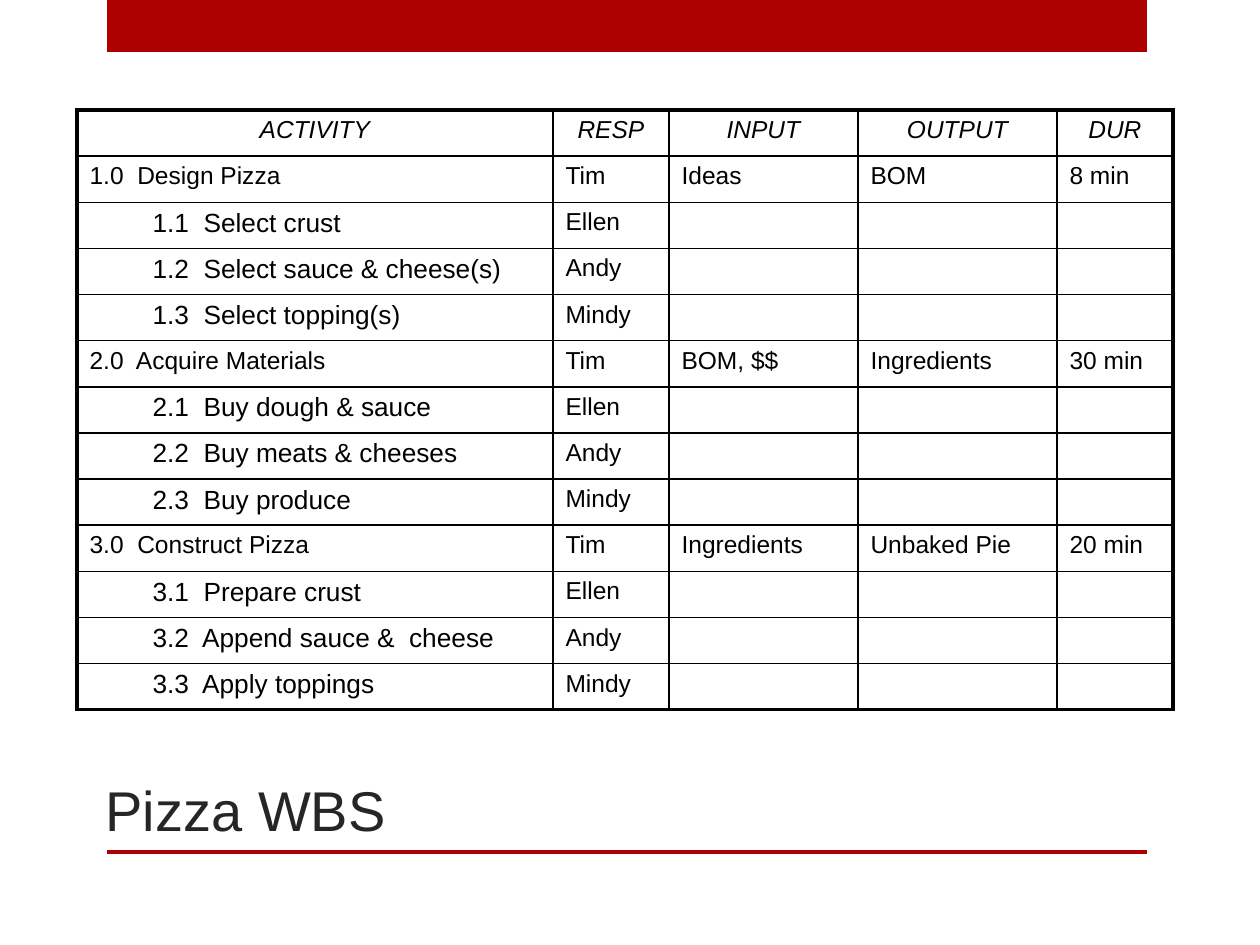
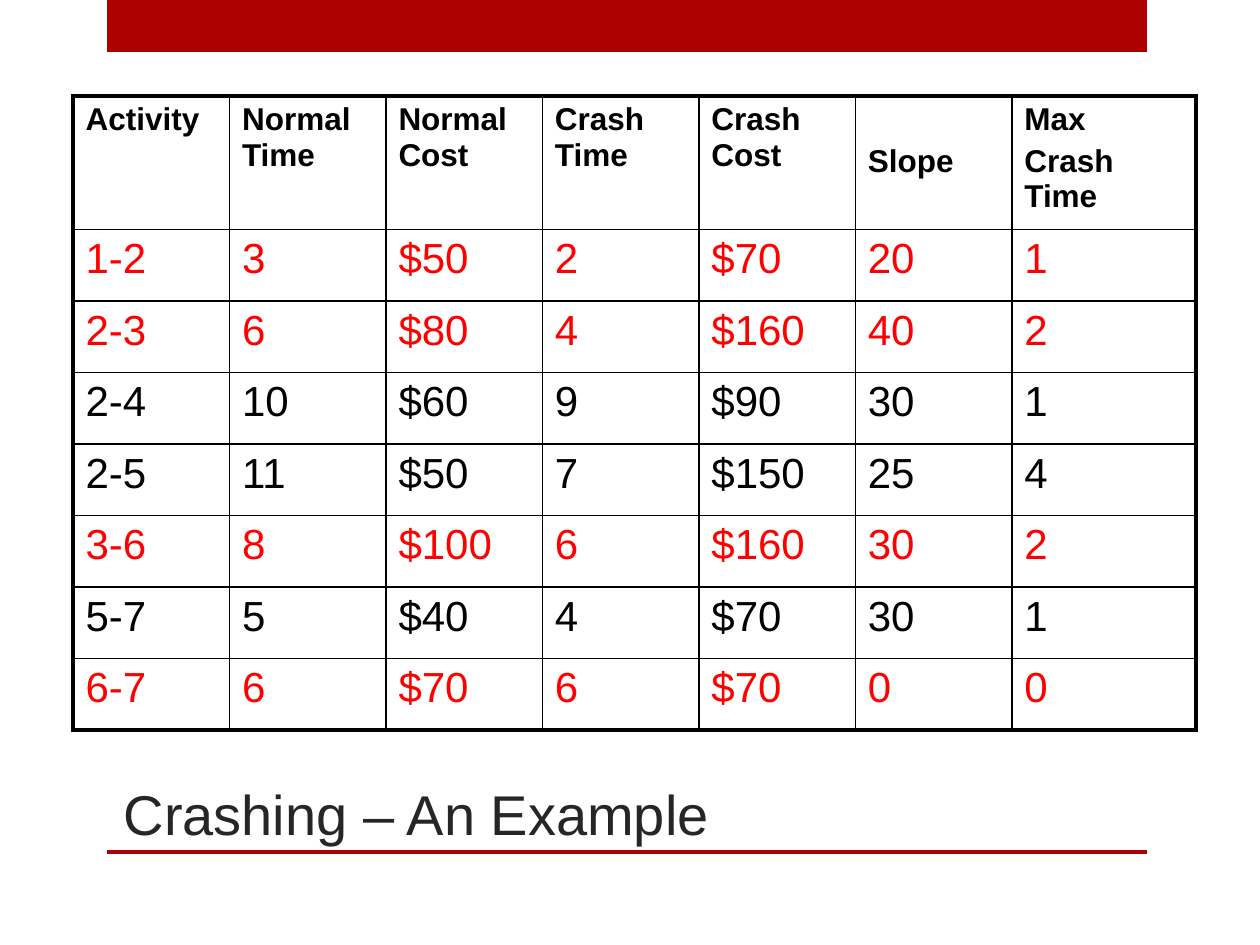
from lxml import etree
from pptx import Presentation
from pptx import util as u
from pptx.dml.color import RGBColor
from pptx.enum import shapes, text
from pptx.oxml.ns import qn

PX = 914400 / 126
FONT = "Arial"
COLORS = {"band": "AD0101", "title": "262626", "text": "000000", "critical": "FF0000"}
PEOPLE = ["Ellen", "Andy", "Mindy"]
PHASES = [
    (["1.0  Design Pizza", "Tim", "Ideas", "BOM", "8 min"],
     ["1.1  Select crust", "1.2  Select sauce & cheese(s)", "1.3  Select topping(s)"]),
    (["2.0  Acquire Materials", "Tim", "BOM, $$", "Ingredients", "30 min"],
     ["2.1  Buy dough & sauce", "2.2  Buy meats & cheeses", "2.3  Buy produce"]),
    (["3.0  Construct Pizza", "Tim", "Ingredients", "Unbaked Pie", "20 min"],
     ["3.1  Prepare crust", "3.2  Append sauce &  cheese", "3.3  Apply toppings"]),
]
CRASH_HEADS = ["Activity", "Normal Time", "Normal Cost", "Crash Time", "Crash Cost",
               "Slope", "Max\nCrash Time"]
CRASH_ROWS = [
    ["1-2", "3", "$50", "2", "$70", "20", "1"],
    ["2-3", "6", "$80", "4", "$160", "40", "2"],
    ["2-4", "10", "$60", "9", "$90", "30", "1"],
    ["2-5", "11", "$50", "7", "$150", "25", "4"],
    ["3-6", "8", "$100", "6", "$160", "30", "2"],
    ["5-7", "5", "$40", "4", "$70", "30", "1"],
    ["6-7", "6", "$70", "6", "$70", "0", "0"],
]
CRITICAL = {"1-2", "2-3", "3-6", "6-7"}


def px(n):
    return u.Emu(round(n * PX))


class Deck:
    """Holds the shared style and the slide being built."""

    def __init__(self):
        self.prs = Presentation()
        self.prs.slide_width, self.prs.slide_height = px(1260), px(945)

    def slide(self, title, *box):
        self.s = self.prs.slides.add_slide(self.prs.slide_layouts[5])
        self.bar(107, 0, 1040, 52)
        self.bar(107, 850, 1040, 4)
        sp = self.s.shapes.title
        sp.left, sp.top, sp.width, sp.height = map(px, box)
        tf = sp.text_frame
        tf.auto_size = text.MSO_AUTO_SIZE.NONE
        tf.vertical_anchor = text.MSO_ANCHOR.BOTTOM
        p = tf.paragraphs[0]
        p.alignment = text.PP_ALIGN.LEFT
        self.run(p, title, 32, "title")

    def bar(self, *box):
        sp = self.s.shapes.add_shape(shapes.MSO_SHAPE.RECTANGLE, *map(px, box))
        sp.shadow.inherit = False
        sp.fill.solid()
        sp.fill.fore_color.rgb = RGBColor.from_string(COLORS["band"])
        sp.line.fill.background()

    def run(self, p, words, size, color="text", bold=False, italic=False):
        r = p.add_run()
        r.text = words
        f = r.font
        f.name, f.size, f.bold, f.italic = FONT, u.Pt(size), bold, italic
        f.color.rgb = RGBColor.from_string(COLORS[color])

    def table(self, x, y, w, h, cols, rows):
        """Add a ruled table whose columns and rows share its size by weight."""
        frame = self.s.shapes.add_table(len(rows), len(cols), px(x), px(y), px(w), px(h))
        tbl = frame.table
        tbl.first_row = tbl.horz_banding = False
        for col, weight in zip(tbl.columns, cols):
            col.width = px(w * weight / sum(cols))
        for row, weight in zip(tbl.rows, rows):
            row.height = px(h * weight / sum(rows))
        for i in range(len(rows)):
            for j in range(len(cols)):
                outer = {"L": j == 0, "R": j == len(cols) - 1,
                         "T": i == 0, "B": i == len(rows) - 1}
                self.borders(tbl.cell(i, j), outer)
        return tbl

    def borders(self, cell, outer):
        tc_pr = cell._tc.get_or_add_tcPr()
        for side, thick in outer.items():
            width = u.Pt(2.25 if thick else 1)
            ln = etree.SubElement(tc_pr, qn(f"a:ln{side}"), w=str(width))
            fill = etree.SubElement(ln, qn("a:solidFill"))
            etree.SubElement(fill, qn("a:srgbClr"), val=COLORS["text"])
        cell.fill.background()

    def cell(self, cell, words, size, align=None, indent=0, **style):
        tf = cell.text_frame
        for k, line in enumerate(words.split("\n")):
            p = tf.add_paragraph() if k else tf.paragraphs[0]
            p.alignment = align
            if k:
                p.space_before = u.Pt(size * 0.2)
            if indent:
                p._p.get_or_add_pPr().set("marL", str(px(indent)))
            if line:
                self.run(p, line, size, **style)
            else:
                etree.SubElement(p._p, qn("a:endParaRPr"), sz=str(size * 100))


def pizza_wbs(d):
    d.slide("Pizza WBS", 93, 737, 1058, 112)
    tbl = d.table(77, 110, 1096, 600, [476, 116, 189, 199, 116], [1] * 13)
    for j, head in enumerate(["ACTIVITY", "RESP", "INPUT", "OUTPUT", "DUR"]):
        d.cell(tbl.cell(0, j), head, 14, text.PP_ALIGN.CENTER, italic=True)
    i = 1
    for phase, tasks in PHASES:
        for j, words in enumerate(phase):
            d.cell(tbl.cell(i, j), words, 14)
        for i, (task, person) in enumerate(zip(tasks, PEOPLE), i + 1):
            d.cell(tbl.cell(i, 0), task, 15, indent=63)
            for j, words in enumerate([person, "", "", ""], 1):
                d.cell(tbl.cell(i, j), words, 14)
        i += 1


def crashing(d):
    d.slide("Crashing – An Example", 111, 772, 1032, 81)
    tbl = d.table(73, 96, 1123, 634, [124] * 6 + [146], [267] + [143] * 7)
    for j, head in enumerate(CRASH_HEADS):
        d.cell(tbl.cell(0, j), head, 18, bold=True)
    tbl.cell(0, CRASH_HEADS.index("Slope")).margin_top = px(48)
    for i, row in enumerate(CRASH_ROWS, 1):
        color = "critical" if row[0] in CRITICAL else "text"
        for j, words in enumerate(row):
            d.cell(tbl.cell(i, j), words, 24, color=color)


def main():
    d = Deck()
    pizza_wbs(d)
    crashing(d)
    d.prs.save("out.pptx")


if __name__ == "__main__":
    main()
